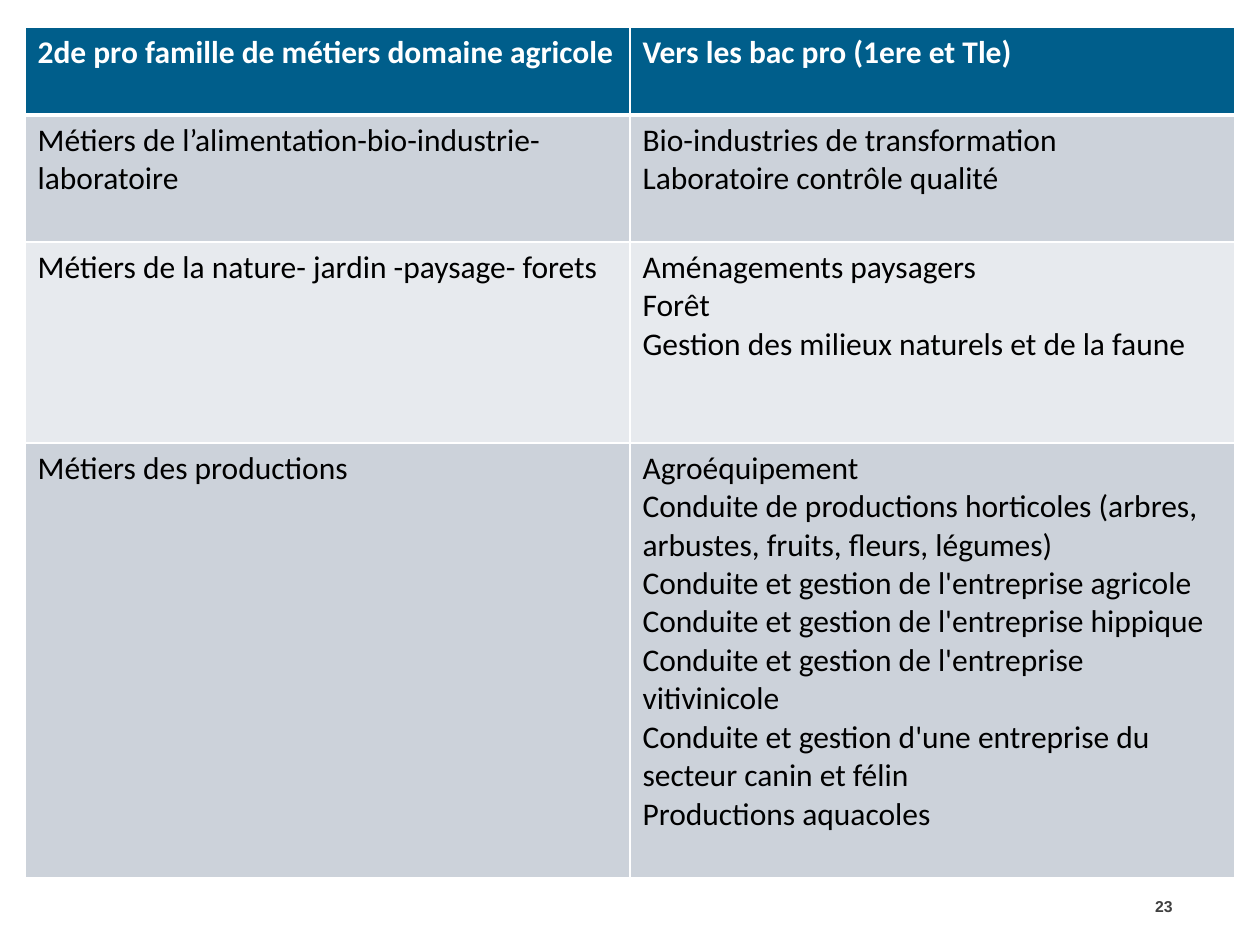
import pptx
import pptx.dml.color
import pptx.enum.text
import pptx.oxml
import pptx.oxml.ns
import pptx.util

RGBColor = pptx.dml.color.RGBColor
WHITE = RGBColor(0xFF, 0xFF, 0xFF)
BLACK = RGBColor(0x00, 0x00, 0x00)
GREY = RGBColor(0x40, 0x40, 0x40)
HEADER_BLUE = RGBColor(0x00, 0x5E, 0x8B)
BANDS = [RGBColor(0xE7, 0xEA, 0xEE), RGBColor(0xCC, 0xD2, 0xDA)]

SCALE = 914400 / 126
ROW_HEIGHTS = [88, 127, 201, 435]
PATHWAYS = [
    ("2de pro famille de métiers domaine agricole", ["Vers les bac pro (1ere et Tle)"]),
    ("Métiers de l’alimentation-bio-industrie-laboratoire",
     ["Bio-industries de transformation", "Laboratoire contrôle qualité"]),
    ("Métiers de la nature- jardin -paysage- forets",
     ["Aménagements paysagers", "Forêt", "Gestion des milieux naturels et de la faune"]),
    ("Métiers des productions",
     ["Agroéquipement",
      "Conduite de productions horticoles (arbres, arbustes, fruits, fleurs, légumes)",
      "Conduite et gestion de l'entreprise agricole",
      "Conduite et gestion de l'entreprise hippique",
      "Conduite et gestion de l'entreprise vitivinicole",
      "Conduite et gestion d'une entreprise du secteur canin et félin",
      "Productions aquacoles"]),
]


def px(length):
    return round(length * SCALE)


def format_text(text_frame, font_name, size, color, bold):
    for paragraph in text_frame.paragraphs:
        for run in paragraph.runs:
            run.font.name = font_name
            run.font.size = pptx.util.Pt(size)
            run.font.color.rgb = color
            run.font.bold = bold


def add_borders(cell, widths):
    properties = cell._tc.get_or_add_tcPr()
    for side, width in widths.items():
        properties.append(pptx.oxml.parse_xml(
            f'<a:ln{side} {pptx.oxml.ns.nsdecls("a")} w="{pptx.util.Pt(width)}">'
            f'<a:solidFill><a:srgbClr val="{WHITE}"/></a:solidFill></a:ln{side}>'))


def add_pathways(slide, left, top, width, height):
    table = slide.shapes.add_table(
        len(PATHWAYS), 2, px(left), px(top), px(width), px(height)).table
    for column in table.columns:
        column.width = px(width / 2)
    for index, (family, diplomas) in enumerate(PATHWAYS):
        header = index == 0
        table.rows[index].height = px(height * ROW_HEIGHTS[index] / sum(ROW_HEIGHTS))
        borders = {"L": 1, "R": 1, "T": 3 if index == 1 else 1, "B": 3 if header else 1}
        for cell, lines in zip(table.rows[index].cells, ([family], diplomas)):
            cell.text_frame.text = "\n".join(lines)
            format_text(cell.text_frame, "Calibri", 18, WHITE if header else BLACK, header)
            add_borders(cell, borders)
            cell.fill.solid()
            cell.fill.fore_color.rgb = HEADER_BLUE if header else BANDS[index % 2]


def add_page_number(slide, left, top, width, height):
    page_number = slide.shapes.add_textbox(px(left), px(top), px(width), px(height))
    text_frame = page_number.text_frame
    text_frame.word_wrap = True
    text_frame.vertical_anchor = pptx.enum.text.MSO_ANCHOR.MIDDLE
    text_frame.text = "23"
    text_frame.paragraphs[0].alignment = pptx.enum.text.PP_ALIGN.RIGHT
    format_text(text_frame, "Arial", 9, GREY, True)


def main():
    presentation = pptx.Presentation()
    presentation.slide_width = px(1260)
    presentation.slide_height = px(945)
    slide = presentation.slides.add_slide(presentation.slide_layouts[6])
    add_page_number(slide, 1123, 881, 62, 50)
    add_pathways(slide, 25, 27, 1210, 851)
    presentation.save("out.pptx")


if __name__ == "__main__":
    main()
